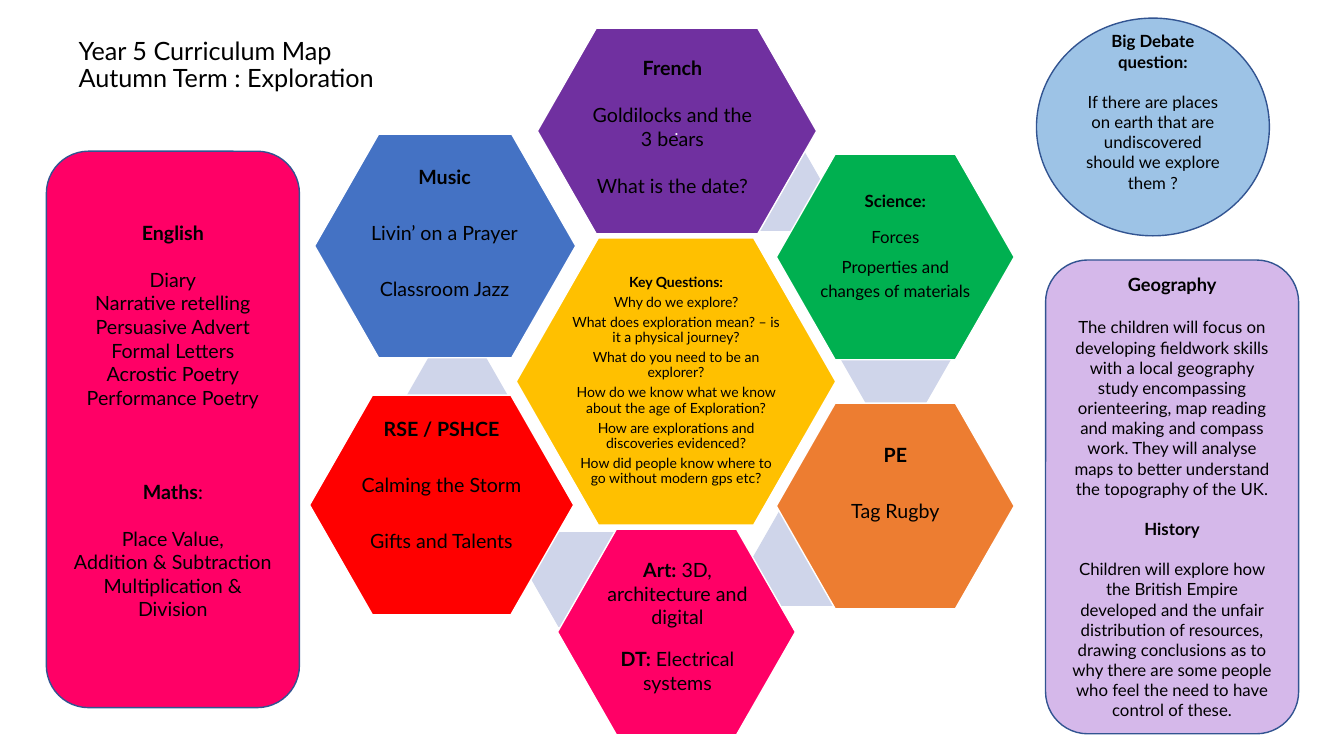
from pptx import Presentation
from pptx.dml.color import RGBColor
from pptx.enum.shapes import MSO_SHAPE as Shape
from pptx.enum.text import MSO_ANCHOR as Anchor, MSO_AUTO_SIZE as Fit, PP_ALIGN as Align
from pptx.util import Inches, Pt

COLOURS = {
    "black": "000000", "white": "FFFFFF", "gold": "FFC000", "pale": "CFD5EA",
    "purple": "7030A0", "green": "00B050", "orange": "ED7D31", "pink": "FF0066",
    "red": "FF0000", "blue": "4472C4", "sky": "9DC3E6", "lilac": "D5B8EA",
    "outline": "325491",
}


def colour(name):
    return RGBColor.from_string(COLOURS[name])


class CurriculumMap:
    """Holds the text style and the current page, and adds each kind of element."""

    font = "Lato"

    def __init__(self, deck):
        self.page = deck.slides.add_slide(deck.slide_layouts[5])

    def fill_text(self, frame, rows, size=14, tone="black", align=Align.CENTER,
                  tight=True, after=0, insets=(0.01, 0.01, 0.01, 0.01)):
        left, top, right, bottom = map(Inches, insets)
        layout = {"word_wrap": True, "auto_size": Fit.NONE,
                  "vertical_anchor": Anchor.MIDDLE, "margin_left": left,
                  "margin_top": top, "margin_right": right, "margin_bottom": bottom}
        for key, value in layout.items():
            setattr(frame, key, value)
        for index, (text, before) in enumerate(rows):
            para = frame.add_paragraph() if index else frame.paragraphs[0]
            spacing = {"alignment": align, "line_spacing": 0.9 if tight else 1.0,
                       "space_before": Pt(before + after if index else 0),
                       "space_after": Pt(0)}
            for key, value in spacing.items():
                setattr(para, key, value)
            for number, piece in enumerate(text.split("*")):
                if piece:
                    self.span(para, piece, size, tone, number % 2 == 1)

    def span(self, para, text, size, tone, bold):
        span = para.add_run()
        span.text = text
        for key, value in {"name": self.font, "size": Pt(size), "bold": bold}.items():
            setattr(span.font, key, value)
        span.font.color.rgb = colour(tone)

    def title(self, at, lines):
        box = self.page.shapes.title
        box.left, box.top, box.width, box.height = map(Inches, at)
        self.fill_text(box.text_frame, [(line, 0) for line in lines], size=18,
                       align=Align.LEFT, insets=(0.1, 0.05, 0.1, 0.05))

    def shape(self, kind, at, fill, line=None):
        shape = self.page.shapes.add_shape(kind, *map(Inches, at))
        shape.shadow.inherit = False
        shape.fill.solid()
        shape.fill.fore_color.rgb = colour(fill)
        if line:
            shape.line.color.rgb = colour(line)
            shape.line.width = Pt(1)
        else:
            shape.line.fill.background()
        return shape

    def hexagon(self, at, fill, line="white"):
        self.shape(Shape.HEXAGON, at, fill, line).adjustments[0] = 0.286

    def link(self, left, top):
        self.hexagon((left, top, 1.09, 0.94), "pale", None)

    def label(self, at, rows, **style):
        box = self.page.shapes.add_textbox(*map(Inches, at))
        self.fill_text(box.text_frame, rows, **style)

    def panel(self, kind, at, fill, rows, size, bottom=0.05):
        shape = self.shape(kind, at, fill, "outline")
        self.fill_text(shape.text_frame, rows, size=size, tight=False,
                       insets=(0.1, 0.05, 0.1, bottom))
        return shape


def main():
    deck = Presentation()
    deck.slide_width, deck.slide_height = Inches(13.33), Inches(7.5)
    page = CurriculumMap(deck)

    page.title((0.68, 0.29, 11.5, 0.72),
               ["Year 5 Curriculum Map", "Autumn Term : Exploration"])

    page.hexagon((5.12, 2.36, 3.17, 2.85), "gold")
    questions = ["*Key Questions:*", "Why do we explore?",
                 "What does exploration mean? – is it a physical journey?",
                 "What do you need to be an explorer?",
                 "How do we know what we know about the age of Exploration?",
                 "How are explorations and discoveries evidenced?",
                 "How did people know where to go without modern gps etc?"]
    page.label((5.66, 2.78, 2.09, 2), [(text, 0) for text in questions],
               size=10, after=3.5)

    page.link(7.07, 1.35)
    page.hexagon((5.33, 0.28, 2.77, 2.04), "purple")
    page.label((5.75, 0.59, 1.92, 1.41), [("*.*", 0)], size=10, tone="white")
    page.label((5.8, 0.51, 1.74, 1.49),
               [("*French*", 0), ("Goldilocks and the 3 bears", 16.8),
                ("What is the date?", 16.8)], tight=False)

    page.link(8.34, 3.1)
    page.hexagon((7.7, 1.53, 2.36, 2.04), "green")
    page.label((8.09, 1.77, 1.58, 1.36),
               [("*Science:*", 0), ("Forces", 8.6), ("Properties and", 4.3),
                ("changes of materials", 0)], size=12, after=4.2)

    page.link(7.46, 5.07)
    page.hexagon((7.7, 4, 2.36, 2.04), "orange")
    page.label((8.09, 4.12, 1.58, 1.36), [("*PE*", 0), ("Tag Rugby", 25)])

    page.link(5.27, 5.28)
    page.hexagon((5.53, 5.25, 2.36, 2.04), "pink")
    page.label((5.93, 5.52, 1.58, 1.38),
               [("*Art:* 3D, architecture and digital", 0),
                ("*DT:* Electrical", 13.2), ("systems", 0)], tight=False)

    page.link(3.99, 3.53)
    page.hexagon((3.07, 3.92, 2.62, 2.18), "red")
    page.label((3.51, 4.08, 1.74, 1.49),
               [("*RSE / PSHCE*", 0), ("Calming the Storm", 25),
                ("Gifts and Talents", 25)])

    page.hexagon((3.12, 1.33, 2.59, 2.22), "blue")
    page.label((3.54, 1.58, 1.74, 1.49),
               [("*Music*", 0), ("Livin’ on a Prayer", 25), ("Classroom Jazz", 25)])

    page.panel(Shape.ROUNDED_RECTANGLE, (0.46, 1.5, 2.51, 5.52), "pink",
               [("*English*", 0), ("Diary", 16.8), ("Narrative retelling", 0),
                ("Persuasive Advert", 0), ("Formal Letters", 0),
                ("Acrostic Poetry", 0), ("Performance Poetry", 0),
                ("*Maths*:", 50.4), ("Place Value,", 16.8),
                ("Addition & Subtraction Multiplication & Division", 0)],
               size=14, bottom=0.22)

    page.panel(Shape.OVAL, (10.28, 0.18, 2.31, 2.16), "sky",
               [("*Big Debate question:*", 0),
                ("If there are places on earth that are undiscovered should we "
                 "explore them ?", 14.4)], size=12, bottom=0.35)

    humanities = page.panel(
        Shape.ROUNDED_RECTANGLE, (10.37, 2.58, 2.51, 4.7), "lilac",
        [("*Geography*", 0),
         ("The children will focus on developing fieldwork skills with a "
          "local geography study encompassing orienteering, map reading and "
          "making and compass work. They will analyse maps to better "
          "understand the topography of the UK.", 15.6),
         ("*History*", 14.4),
         ("Children will explore how the British Empire developed and the "
          "unfair distribution of resources, drawing conclusions as to why "
          "there are some people who feel the need to have control of "
          "these.", 14.4)], size=12)
    humanities.text_frame.paragraphs[0].runs[0].font.size = Pt(13)

    deck.save("out.pptx")


if __name__ == "__main__":
    main()
